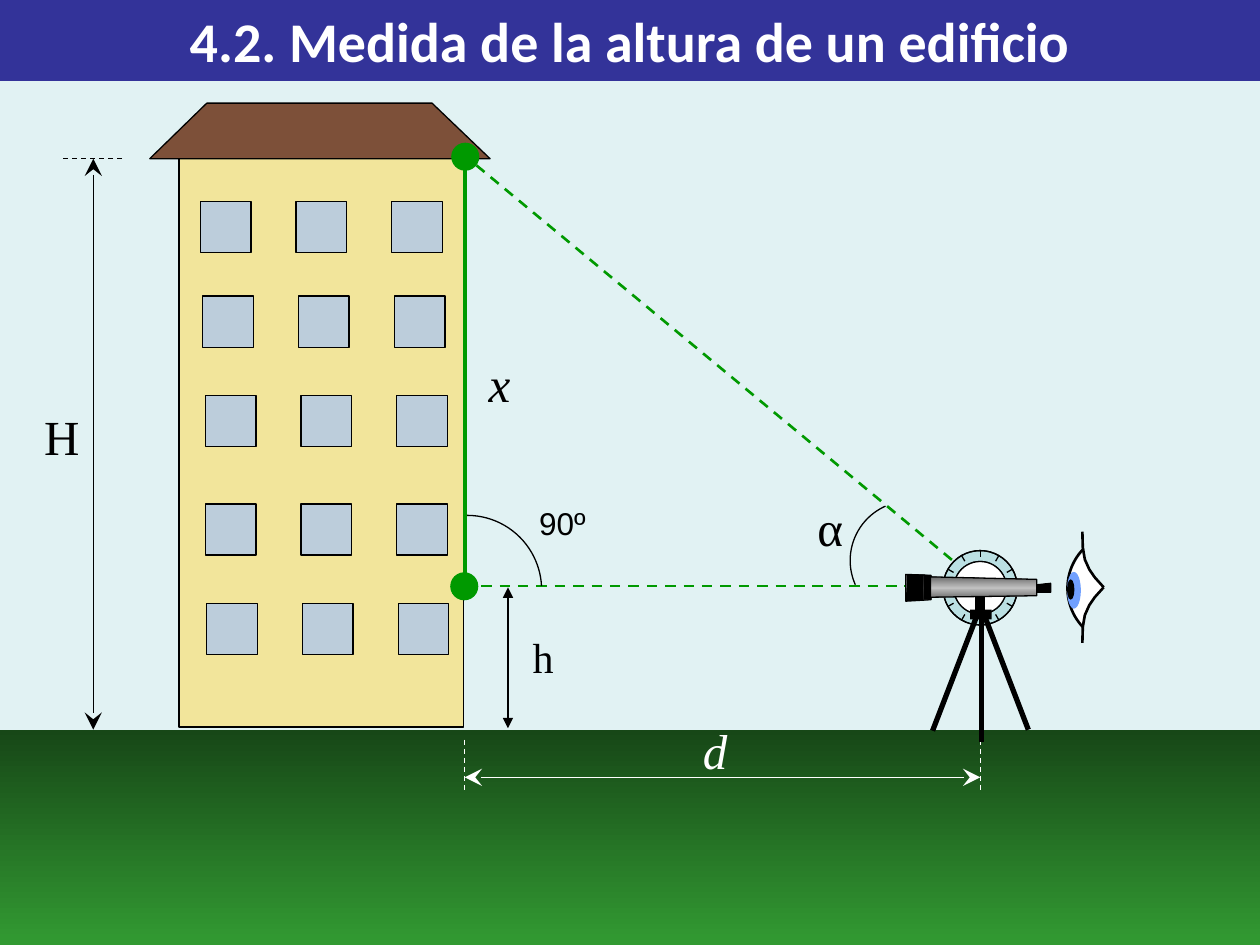
import math

from lxml import etree
from pptx import Presentation
from pptx.dml.color import RGBColor
from pptx.enum.dml import MSO_LINE
from pptx.enum.shapes import MSO_CONNECTOR, MSO_SHAPE
from pptx.enum.text import MSO_ANCHOR, PP_ALIGN
from pptx.oxml.ns import qn
from pptx.util import Cm, Pt

RECT, OVAL, ARC = MSO_SHAPE.RECTANGLE, MSO_SHAPE.OVAL, MSO_SHAPE.ARC
STRAIGHT = MSO_CONNECTOR.STRAIGHT
DASH = MSO_LINE.DASH
CENTER, MIDDLE = PP_ALIGN.CENTER, MSO_ANCHOR.MIDDLE
TITLE_ONLY = 5

BLACK, WHITE, GREEN = "000000", "FFFFFF", "009900"
SKY, BANNER = "E1F2F3", "333399"
WALL, ROOF, GLASS = "F2E59B", "7D5039", "BCCDDB"
DIAL, IRIS = "BBE0E3", "71A0FF"
GRASS = ["174717", "329A32"]
METAL = ["595959", "C0C0C0", "595959"]


def rgb(value):
    return RGBColor.from_string(value)


class Sketch:
    """Drawing style and current slide; lengths in centimetres."""

    serif, sans, heading = "Times New Roman", "Arial", "Calibri"
    thin = 0.75

    def __init__(self, slide):
        self.slide = slide
        self.shapes = slide.shapes

    def paint(self, shape, fill=None, line=None, width=thin):
        """Fill with a colour, a list of gradient colours from the top, or nothing."""
        shape.shadow.inherit = False
        if fill is None:
            shape.fill.background()
        elif isinstance(fill, list):
            shape.fill.gradient()
            shape.fill.gradient_angle = 270
            stops = shape._element.spPr.find(".//" + qn("a:gsLst"))
            for stop in list(stops):
                stops.remove(stop)
            for index, colour in enumerate(fill):
                position = 100000 * index // (len(fill) - 1)
                stop = etree.SubElement(stops, qn("a:gs"), pos=str(position))
                etree.SubElement(stop, qn("a:srgbClr"), val=colour)
        else:
            shape.fill.solid()
            shape.fill.fore_color.rgb = rgb(fill)
        if line is None:
            shape.line.fill.background()
        else:
            shape.line.color.rgb = rgb(line)
            shape.line.width = Pt(width)
        return shape

    def shape(self, kind, left, top, width, height, fill=None, line=None, weight=thin):
        shape = self.shapes.add_shape(kind, Cm(left), Cm(top), Cm(width), Cm(height))
        return self.paint(shape, fill, line, weight)

    def circle(self, x, y, radius, fill, line):
        self.shape(OVAL, x - radius, y - radius, 2 * radius, 2 * radius, fill, line)

    def arc(self, x, y, radius, start, end, weight=thin):
        """Arc around (x, y), clockwise between two angles in degrees."""
        shape = self.shape(ARC, x - radius, y - radius, 2 * radius, 2 * radius,
                           None, BLACK, weight)
        shape.adjustments[0] = start * 0.6
        shape.adjustments[1] = end * 0.6

    def outline(self, points, fill=None, line=None, weight=thin, close=True):
        corners = [(Cm(x), Cm(y)) for x, y in points]
        builder = self.shapes.build_freeform(*corners[0])
        builder.add_line_segments(corners[1:], close=close)
        self.paint(builder.convert_to_shape(), fill, line, weight)

    def line(self, start, end, colour=BLACK, weight=thin, dash=None, arrows=None, size="med"):
        line = self.shapes.add_connector(
            STRAIGHT, Cm(start[0]), Cm(start[1]), Cm(end[0]), Cm(end[1]))
        line.line.color.rgb = rgb(colour)
        line.line.width = Pt(weight)
        if dash:
            line.line.dash_style = dash
        properties = line._element.spPr
        if arrows:
            stroke = properties.find(qn("a:ln"))
            for tag in ("a:headEnd", "a:tailEnd"):
                etree.SubElement(stroke, qn(tag), type=arrows, w=size, len=size)
        etree.SubElement(properties, qn("a:effectLst"))

    def add_text(self, frame, text, size, font, colour, bold=False, italic=False):
        para = frame.paragraphs[0]
        span = para.add_run()
        span.text = text
        span.font.size = Pt(size)
        span.font.name = font
        span.font.color.rgb = rgb(colour)
        span.font.bold = bold
        span.font.italic = italic
        return para

    def label(self, text, left, top, width, height, size=28, font=serif,
              colour=BLACK, italic=False, wrap=True):
        box = self.shapes.add_textbox(Cm(left), Cm(top), Cm(width), Cm(height))
        box.text_frame.word_wrap = wrap
        self.add_text(box.text_frame, text, size, font, colour, italic=italic)

    def title(self, text):
        title = self.shapes.title
        title.left, title.top, title.width, title.height = 0, 0, Cm(25.4), Cm(1.63)
        title.fill.solid()
        title.fill.fore_color.rgb = rgb(BANNER)
        title.text_frame.vertical_anchor = MIDDLE
        para = self.add_text(title.text_frame, text, 32, self.heading, WHITE, bold=True)
        para.alignment = CENTER


def draw_building(sketch):
    sketch.shape(RECT, 3.61, 3.2, 5.74, 11.46, WALL, BLACK, 0)
    sketch.outline([(3.02, 3.2), (4.17, 2.08), (8.71, 2.08), (9.88, 3.2)], ROOF, BLACK, 0)
    floors = [(4.04, 4.06), (4.09, 5.97), (4.14, 7.98), (4.14, 10.16), (4.17, 12.17)]
    for left, top in floors:
        for column in range(3):
            sketch.shape(RECT, left + 1.93 * column, top, 1.02, 1.03, GLASS, BLACK, 0)


def draw_measures(sketch):
    sketch.line((9.7, 11.81), (19.84, 11.81), GREEN, 1.5, DASH)
    sketch.line((19.76, 11.76), (9.42, 3.18), GREEN, 1.5, DASH)
    sketch.arc(18.34, 11.3, 1.2, 156, 246)
    sketch.label("α", 16.23, 9.91, 1.19, 1.45)
    sketch.arc(9.42, 11.89, 1.5, 270, 357)
    sketch.label("90º", 10.62, 10.03, 1.45, 1.02, 18, sketch.sans, wrap=False)

    sketch.line((2.46, 3.2), (1.27, 3.2), dash=DASH)
    sketch.line((1.88, 3.2), (1.88, 14.71), arrows="stealth", size="lg")
    sketch.label("H", 0.64, 8.08, 1.6, 1.45)
    sketch.line((10.24, 11.84), (10.24, 14.68), arrows="triangle")
    sketch.label("h", 10.49, 12.6, 1.47, 1.27, 24)
    for x in (9.37, 19.76):
        sketch.line((x, 14.91), (x, 16), WHITE, dash=DASH)
    sketch.line((9.37, 15.67), (19.76, 15.67), WHITE, arrows="stealth", size="lg")
    sketch.label("d", 13.92, 14.4, 1.8, 1.45, colour=WHITE, italic=True)


def draw_protractor(sketch):
    x, y, outer, inner = 19.76, 11.85, 0.75, 0.53
    sketch.circle(x, y, outer, DIAL, BLACK)
    for start, end in ((0, 180), (180, 360)):
        for radius in (outer, inner):
            sketch.arc(x, y, radius, start, end)
    for degrees in range(0, 360, 30):
        dx, dy = math.cos(math.radians(degrees)), math.sin(math.radians(degrees))
        sketch.line((x + outer * dx, y + outer * dy), (x + 0.62 * dx, y + 0.62 * dy),
                    weight=3 if degrees % 180 == 0 else 0.75)
    sketch.circle(x, y, inner, WHITE, BLACK)
    sketch.line((x, 12.04), (x, 12.37), weight=6)
    legs = [((19.86, 12.45), (20.73, 14.71)), ((19.79, 14.96), (19.79, 12.4)),
            ((18.8, 14.73), (19.69, 12.42))]
    for start, end in legs:
        sketch.line(start, end, weight=3)
    sketch.shape(RECT, 19.56, 12.29, 0.43, 0.2, BLACK)


def draw_eye(sketch):
    sketch.outline([
        (21.59, 12.24), (21.64, 12.27), (21.72, 12.22), (21.77, 12.06), (21.77, 11.73),
        (21.72, 11.58), (21.64, 11.53), (21.56, 11.56), (21.72, 11.28), (21.84, 11.13),
        (21.95, 11.46), (22.07, 11.68), (22.23, 11.84), (22.05, 12.04), (21.89, 12.34),
        (21.84, 12.62), (21.72, 12.5)], WHITE)
    lid = [(21.82, 1.12), (21.83, 0.8), (21.87, 0.56), (21.96, 0.36), (22.07, 0.2), (22.25, 0)]
    for side in (1, -1):
        sketch.outline([(x, 11.84 + side * dy) for x, dy in lid],
                       line=BLACK, weight=1.5, close=False)
    sketch.arc(22.66, 11.86, 1.14, 137, 224, 1.5)
    sketch.shape(OVAL, 21.51, 11.53, 0.28, 0.74, IRIS)
    sketch.shape(OVAL, 21.51, 11.68, 0.15, 0.41, BLACK)


def draw_telescope(sketch):
    sketch.outline([
        (21.18, 11.76), (20.9, 11.79), (20.9, 11.68), (18.77, 11.63), (18.77, 11.6),
        (18.26, 11.58), (18.26, 12.12), (18.77, 12.09), (18.77, 12.04), (20.9, 12.01),
        (20.9, 11.94), (21.18, 11.94)], METAL, BLACK)
    sketch.outline([(18.62, 11.58), (18.62, 12.09), (18.26, 12.12), (18.29, 11.58)], BLACK)
    sketch.outline([(18.77, 11.6), (18.77, 12.09), (18.62, 12.09), (18.62, 11.58)], BLACK)
    sketch.shape(RECT, 20.9, 11.78, 0.26, 0.16, BLACK, BLACK)


def main():
    deck = Presentation()
    deck.slide_width, deck.slide_height = Cm(25.4), Cm(19.05)
    page = deck.slides.add_slide(deck.slide_layouts[TITLE_ONLY])
    page.background.fill.solid()
    page.background.fill.fore_color.rgb = rgb(SKY)
    sketch = Sketch(page)
    sketch.title("4.2. Medida de la altura de un edificio")
    draw_building(sketch)
    sketch.shape(RECT, 0, 14.71, 25.4, 4.34, GRASS)
    draw_measures(sketch)
    draw_protractor(sketch)
    draw_eye(sketch)
    draw_telescope(sketch)
    for x, y in ((9.36, 11.82), (9.38, 3.16)):
        sketch.circle(x, y, 0.27, GREEN, GREEN)
    sketch.line((9.37, 11.81), (9.37, 3.1), GREEN, 2.25)
    sketch.label("x", 9.6, 7.01, 1.8, 1.45, italic=True)
    deck.save("out.pptx")


if __name__ == "__main__":
    main()
